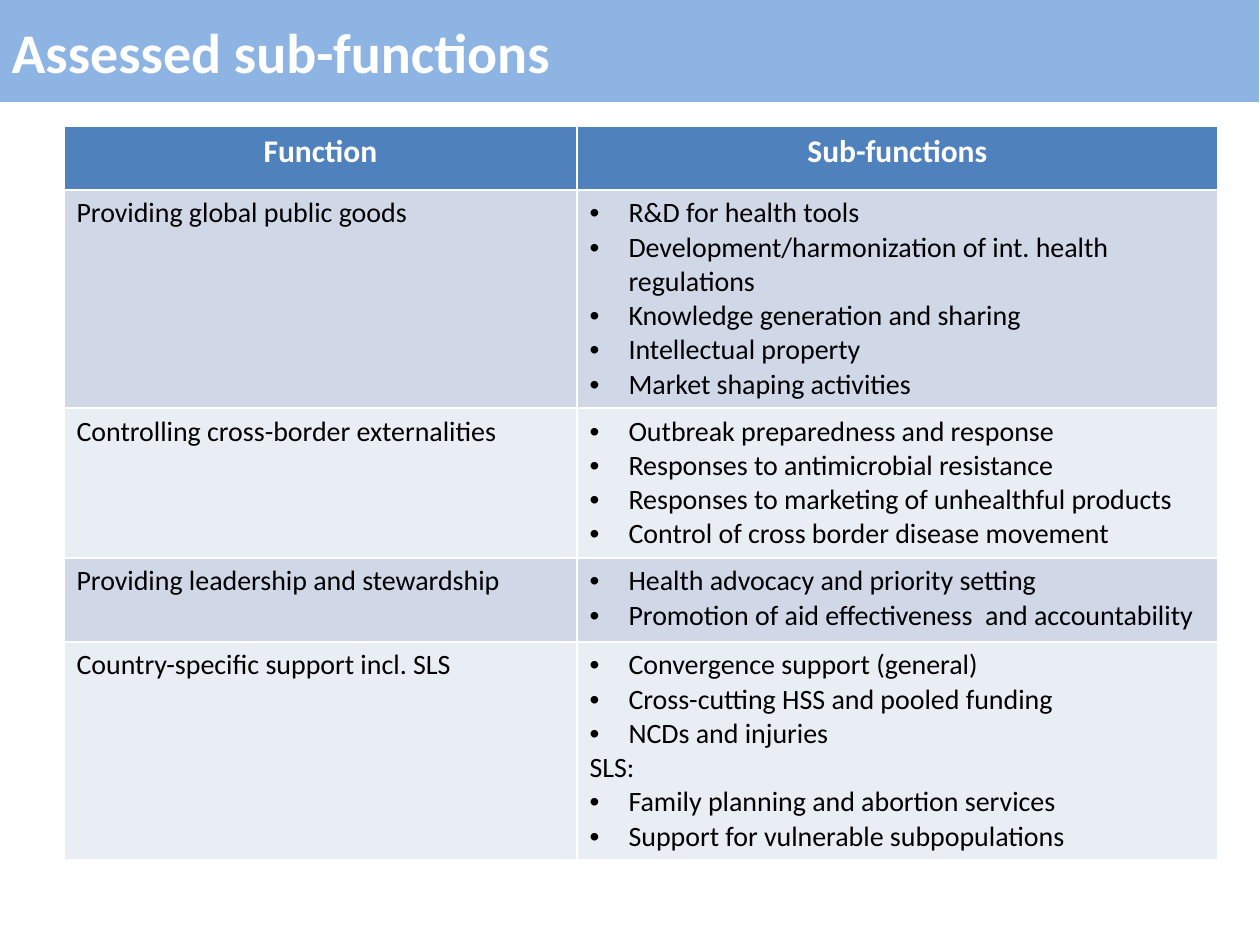
"""Build the slide listing assessed functions and their sub-functions."""
from lxml import etree
from pptx import Presentation
from pptx.dml.color import RGBColor
from pptx.enum.text import MSO_ANCHOR as ANCHOR, PP_ALIGN as ALIGN
from pptx.oxml.ns import qn

PX = 914400 / 126
WHITE = RGBColor(0xFF, 0xFF, 0xFF)
BLACK = RGBColor(0, 0, 0)
BANNER = RGBColor(0x8E, 0xB4, 0xE3)
HEADER = RGBColor(0x4F, 0x81, 0xBD)
BANDS = [RGBColor(0xE9, 0xED, 0xF4), RGBColor(0xD0, 0xD8, 0xE8)]
INDENT = 39
PLAIN = "SLS:"

TITLE_FONT = {"size": 32, "bold": True, "color": WHITE}
HEAD_FONT = {"size": 18, "bold": True, "color": WHITE}
BODY_FONT = {"size": 16, "bold": False, "color": BLACK}

ROWS = [
    (64, "Function", ["Sub-functions"]),
    (218, "Providing global public goods", [
        "R&D for health tools",
        "Development/harmonization of int. health regulations",
        "Knowledge generation and sharing",
        "Intellectual property",
        "Market shaping activities"]),
    (150, "Controlling cross-border externalities", [
        "Outbreak preparedness and response",
        "Responses to antimicrobial resistance",
        "Responses to marketing of unhealthful products",
        "Control of cross border disease movement"]),
    (84, "Providing leadership and stewardship", [
        "Health advocacy and priority setting",
        "Promotion of aid effectiveness  and accountability"]),
    (218, "Country-specific support incl. SLS", [
        "Convergence support (general)",
        "Cross-cutting HSS and pooled funding",
        "NCDs and injuries",
        PLAIN,
        "Family planning and abortion services",
        "Support for vulnerable subpopulations"]),
]


def px(n):
    return round(n * PX)


def write(p, text, fmt, align, bullet=False):
    p.alignment = align
    if bullet:
        pPr = p._p.get_or_add_pPr()
        pPr.set("marL", str(px(INDENT)))
        pPr.set("indent", str(-px(INDENT)))
        etree.SubElement(pPr, qn("a:buFont")).set("typeface", "Arial")
        etree.SubElement(pPr, qn("a:buChar")).set("char", "•")
    r = p.add_run()
    r.text = text
    r.font.name = "Calibri"
    r.font.size = fmt["size"] * 12700
    r.font.bold = fmt["bold"]
    r.font.color.rgb = fmt["color"]


prs = Presentation()
prs.slide_width, prs.slide_height = px(1260), px(945)
s = prs.slides.add_slide(prs.slide_layouts[5])

title = s.shapes.title
title.left, title.top, title.width, title.height = px(-1), 0, px(1260), px(102)
title.fill.solid()
title.fill.fore_color.rgb = BANNER
title.text_frame.vertical_anchor = ANCHOR.MIDDLE
write(title.text_frame.paragraphs[0], "Assessed sub-functions", TITLE_FONT, ALIGN.LEFT)

height = sum(row[0] for row in ROWS)
tbl = s.shapes.add_table(len(ROWS), 2, px(64), px(126), px(1154), px(height)).table
for col, width in zip(tbl.columns, (513, 641)):
    col.width = px(width)

for i, (row_height, function, subs) in enumerate(ROWS):
    tbl.rows[i].height = px(row_height)
    head = i == 0
    fmt = HEAD_FONT if head else BODY_FONT
    align = ALIGN.CENTER if head else ALIGN.LEFT
    for j, lines in enumerate(([function], subs)):
        cell = tbl.cell(i, j)
        cell.fill.solid()
        cell.fill.fore_color.rgb = HEADER if head else BANDS[i % 2]
        tf = cell.text_frame
        for k, line in enumerate(lines):
            p = tf.add_paragraph() if k else tf.paragraphs[0]
            write(p, line, fmt, align, j == 1 and not head and line != PLAIN)

prs.save("out.pptx")
